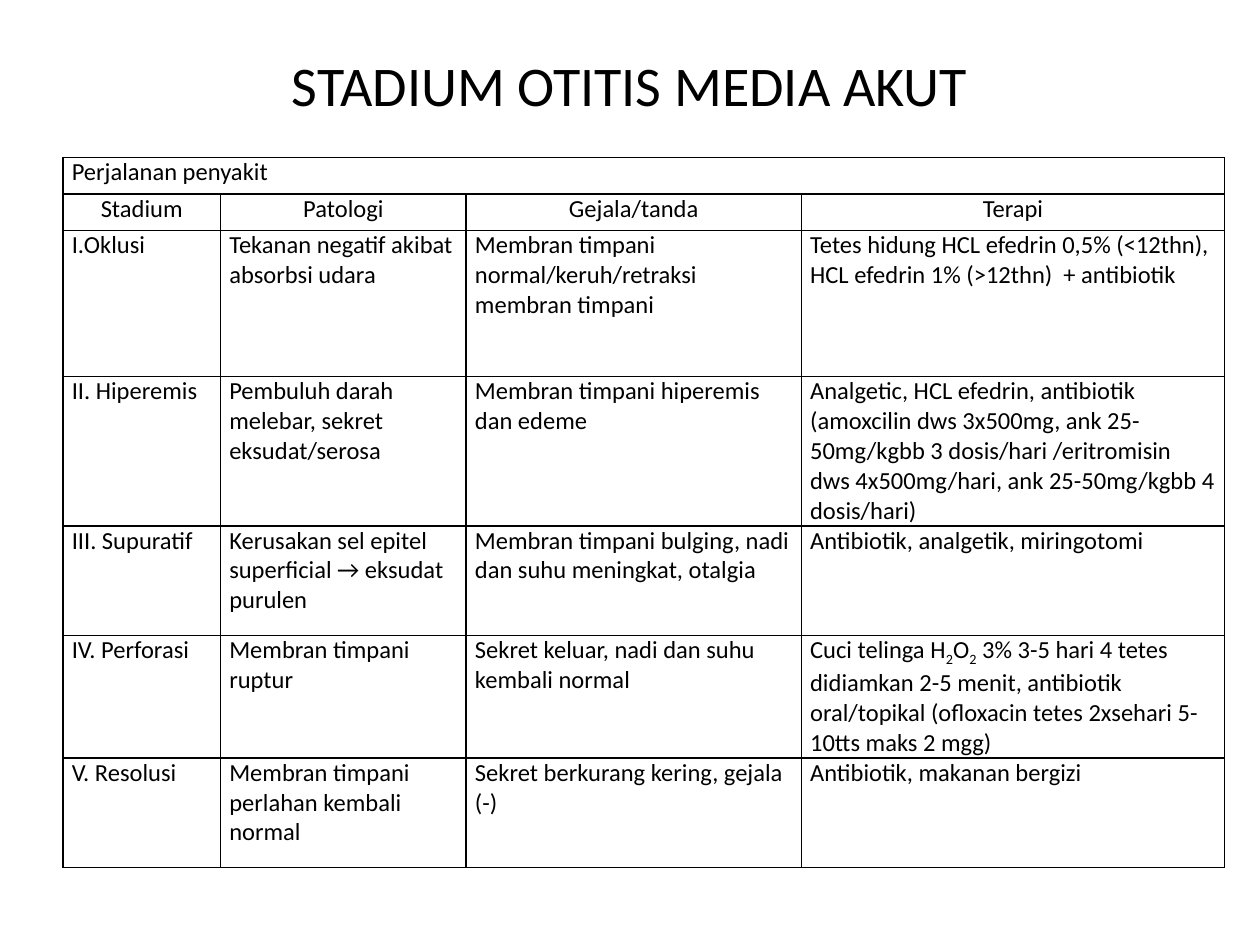
import pptx
import pptx.dml.color
import pptx.enum.text
import pptx.oxml
import pptx.oxml.ns
import pptx.util

INK = "000000"
HEADING = "Perjalanan penyakit"
COLUMNS = ["Stadium", "Patologi", "Gejala/tanda", "Terapi"]
STAGES = [
    ["I.Oklusi", "Tekanan negatif akibat absorbsi udara",
     "Membran timpani normal/keruh/retraksi membran timpani",
     "Tetes hidung HCL efedrin 0,5% (<12thn), HCL efedrin 1% (>12thn)  + antibiotik"],
    ["II. Hiperemis", "Pembuluh darah melebar, sekret eksudat/serosa",
     "Membran timpani hiperemis dan edeme",
     "Analgetic, HCL efedrin, antibiotik (amoxcilin dws 3x500mg, ank 25-50mg/kgbb 3 dosis/hari "
     "/eritromisin dws 4x500mg/hari, ank 25-50mg/kgbb 4 dosis/hari)"],
    ["III. Supuratif", "Kerusakan sel epitel superficial → eksudat purulen",
     "Membran timpani bulging, nadi dan suhu meningkat, otalgia",
     "Antibiotik, analgetik, miringotomi"],
    ["IV. Perforasi", "Membran timpani ruptur",
     "Sekret keluar, nadi dan suhu kembali normal",
     "Cuci telinga H~2~O~2~ 3% 3-5 hari 4 tetes didiamkan 2-5 menit, antibiotik oral/topikal "
     "(ofloxacin tetes 2xsehari 5-10tts maks 2 mgg)"],
    ["V. Resolusi", "Membran timpani perlahan kembali normal",
     "Sekret berkurang kering, gejala (-)", "Antibiotik, makanan bergizi"],
]
COL_SHARES = [0.125, 0.195, 0.266, 0.336]
ROW_UNITS = [1, 1, 4, 3.66, 3, 2.9, 3]
ROW_UNIT = 0.29 / 7.5


def color(hex_code):
    return pptx.dml.color.RGBColor.from_string(hex_code)


class Deck:
    """Holds the style and the current slide, and adds elements by shares of its size."""

    def __init__(self, width, height, font="Calibri"):
        self.prs = pptx.Presentation()
        self.prs.slide_width = pptx.util.Inches(width)
        self.prs.slide_height = pptx.util.Inches(height)
        self.font = font
        self.s = self.prs.slides.add_slide(self.prs.slide_layouts[5])

    def x(self, share):
        return round(self.prs.slide_width * share)

    def y(self, share):
        return round(self.prs.slide_height * share)

    def fill_text(self, p, text, size, align):
        p.alignment = align
        for i, part in enumerate(text.split("~")):
            r = p.add_run()
            r.text = part
            r.font.name, r.font.size = self.font, pptx.util.Pt(size)
            r.font.color.rgb = color(INK)
            if i % 2:
                r._r.get_or_add_rPr().set("baseline", "-25000")

    def title(self, text, left, top, width, height):
        sp = self.s.shapes.title
        sp.left, sp.top = self.x(left), self.y(top)
        sp.width, sp.height = self.x(width), self.y(height)
        tf = sp.text_frame
        tf.word_wrap = False
        tf.vertical_anchor = pptx.enum.text.MSO_ANCHOR.TOP
        self.fill_text(tf.paragraphs[0], text, 32, pptx.enum.text.PP_ALIGN.CENTER)

    def cell(self, cell, text, align):
        cell.margin_left = cell.margin_right = pptx.util.Inches(0.07)
        cell.margin_top = cell.margin_bottom = 0
        self.fill_text(cell.text_frame.paragraphs[0], text, 14, align)

    def border(self, cell):
        tc_pr = cell._tc.get_or_add_tcPr()
        for side in "LRTB":
            tc_pr.append(pptx.oxml.parse_xml(
                f'<a:ln{side} {pptx.oxml.ns.nsdecls("a")} w="12700"><a:solidFill>'
                f'<a:srgbClr val="{INK}"/></a:solidFill></a:ln{side}>'))
        cell.fill.background()

    def table(self, left, top, heading, rows, col_shares, row_shares):
        frame = self.s.shapes.add_table(
            len(row_shares), len(col_shares), self.x(left), self.y(top),
            self.x(sum(col_shares)), self.y(sum(row_shares)))
        table = frame.table
        table.first_row = table.horz_banding = False
        for col, share in zip(table.columns, col_shares):
            col.width = self.x(share)
        for row, share in zip(table.rows, row_shares):
            row.height = self.y(share)
        for cell in table.iter_cells():
            self.border(cell)
        align = pptx.enum.text.PP_ALIGN
        table.cell(0, 0).merge(table.cell(0, len(col_shares) - 1))
        self.cell(table.cell(0, 0), heading, align.LEFT)
        for i, texts in enumerate(rows, 1):
            for j, text in enumerate(texts):
                self.cell(table.cell(i, j), text, align.CENTER if i == 1 else align.LEFT)


def main():
    deck = Deck(10, 7.5)
    deck.table(0.05, 1 / 6, HEADING, [COLUMNS] + STAGES, COL_SHARES,
               [units * ROW_UNIT for units in ROW_UNITS])
    deck.title("STADIUM OTITIS MEDIA AKUT", 0.219, 0.047, 0.562, 0.085)
    deck.prs.save("out.pptx")


if __name__ == "__main__":
    main()
